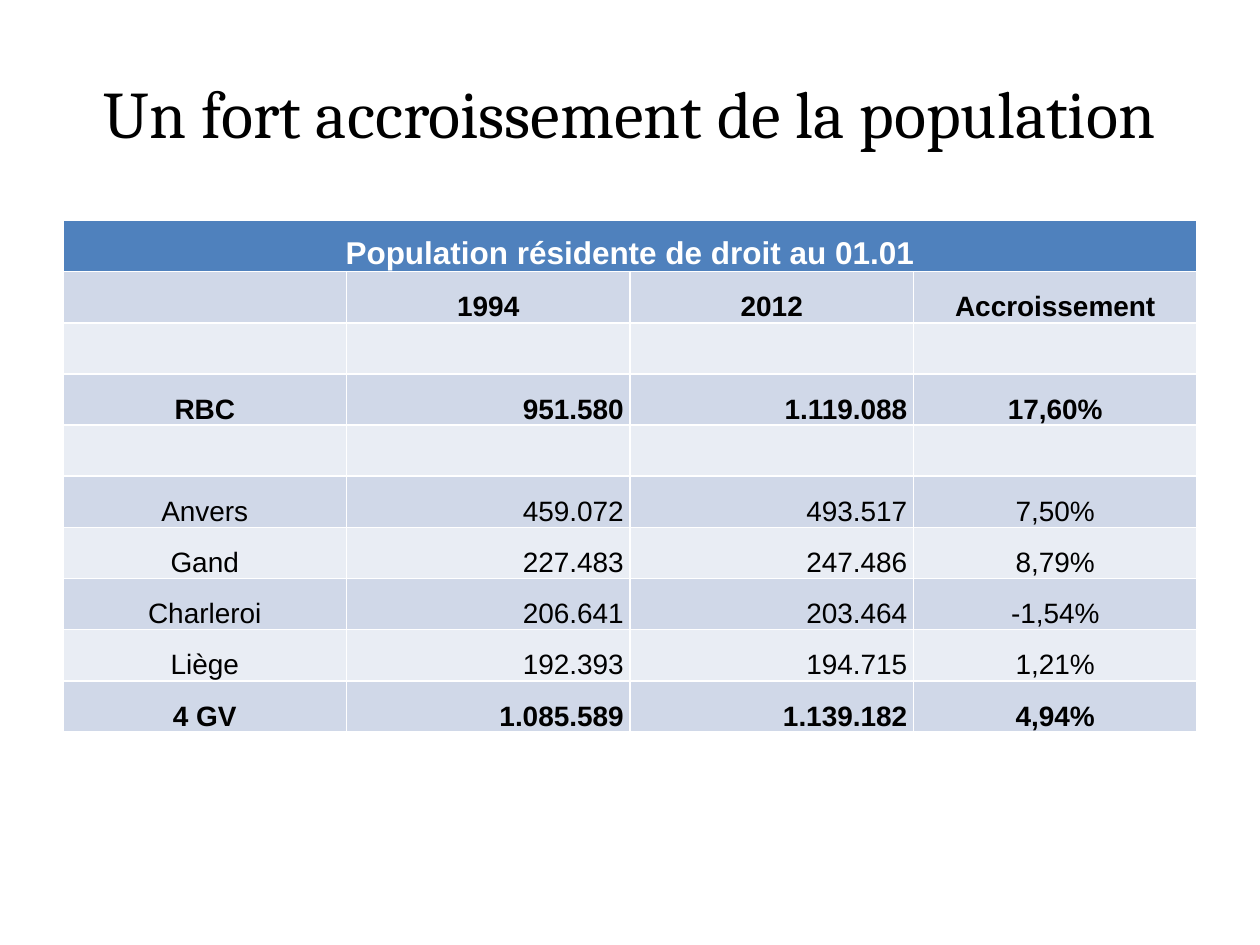
from pptx import Presentation
from pptx.dml.color import RGBColor
from pptx.enum import text
from pptx.util import Inches, Pt

BLACK = RGBColor(0x00, 0x00, 0x00)
WHITE = RGBColor(0xFF, 0xFF, 0xFF)
BLUE = RGBColor(0x4F, 0x81, 0xBD)
DARK = RGBColor(0xD0, 0xD8, 0xE8)
LIGHT = RGBColor(0xE9, 0xED, 0xF4)
ALIGN = text.PP_ALIGN

HEAD = "Population résidente de droit au 01.01"
ROWS = [
    ["", "1994", "2012", "Accroissement"],
    [""] * 4,
    ["RBC", "951.580", "1.119.088", "17,60%"],
    [""] * 4,
    ["Anvers", "459.072", "493.517", "7,50%"],
    ["Gand", "227.483", "247.486", "8,79%"],
    ["Charleroi", "206.641", "203.464", "-1,54%"],
    ["Liège", "192.393", "194.715", "1,21%"],
    ["4 GV", "1.085.589", "1.139.182", "4,94%"],
]
BOLD = {"", "RBC", "4 GV"}  # first cells of the rows in bold


def style(para, font, size, color, bold=False, align=ALIGN.CENTER):
    para.alignment = align
    for run in para.runs:
        run.font.name = font
        run.font.size = Pt(size)
        run.font.color.rgb = color
        run.font.bold = bold


def add_title(slide, left, top, width, height):
    title = slide.shapes.title
    title.left, title.top, title.width, title.height = left, top, width, height
    frame = title.text_frame
    frame.text = "Un fort accroissement de la population"
    frame.vertical_anchor = text.MSO_ANCHOR.MIDDLE
    style(frame.paragraphs[0], "Cambria", 38, BLACK)


def fill_cell(cell, words, fill, size, color, bold, align=ALIGN.CENTER):
    cell.fill.solid()
    cell.fill.fore_color.rgb = fill
    cell.vertical_anchor = text.MSO_ANCHOR.BOTTOM
    cell.margin_left = cell.margin_right = Inches(0.05)
    cell.margin_top = cell.margin_bottom = 0
    cell.text = words
    para = cell.text_frame.paragraphs[0]
    para.line_spacing = 1.15
    style(para, "Arial", size, color, bold, align)


def add_grid(slide, left, top, width, height):
    """Place the population table; its white rules come from the table style."""
    grid = slide.shapes.add_table(
        len(ROWS) + 1, len(ROWS[0]), left, top, width, height).table
    grid.cell(0, 0).merge(grid.cell(0, len(ROWS[0]) - 1))
    fill_cell(grid.cell(0, 0), HEAD, BLUE, 18, WHITE, True)
    for r, row in enumerate(ROWS):
        fill = LIGHT if r % 2 else DARK
        for c, words in enumerate(row):
            count = r > 0 and c in (1, 2)
            fill_cell(grid.cell(r + 1, c), words, fill, 16, BLACK,
                      row[0] in BOLD, ALIGN.RIGHT if count else ALIGN.CENTER)


def main():
    deck = Presentation()
    deck.slide_width, deck.slide_height = Inches(10), Inches(7.5)
    slide = deck.slides.add_slide(deck.slide_layouts[5])
    left, width = Inches(0.5), Inches(9)
    add_title(slide, left, Inches(0.3), width, Inches(1.17))
    add_grid(slide, left, Inches(1.75), width, Inches(4.06))
    deck.save("out.pptx")


if __name__ == "__main__":
    main()
